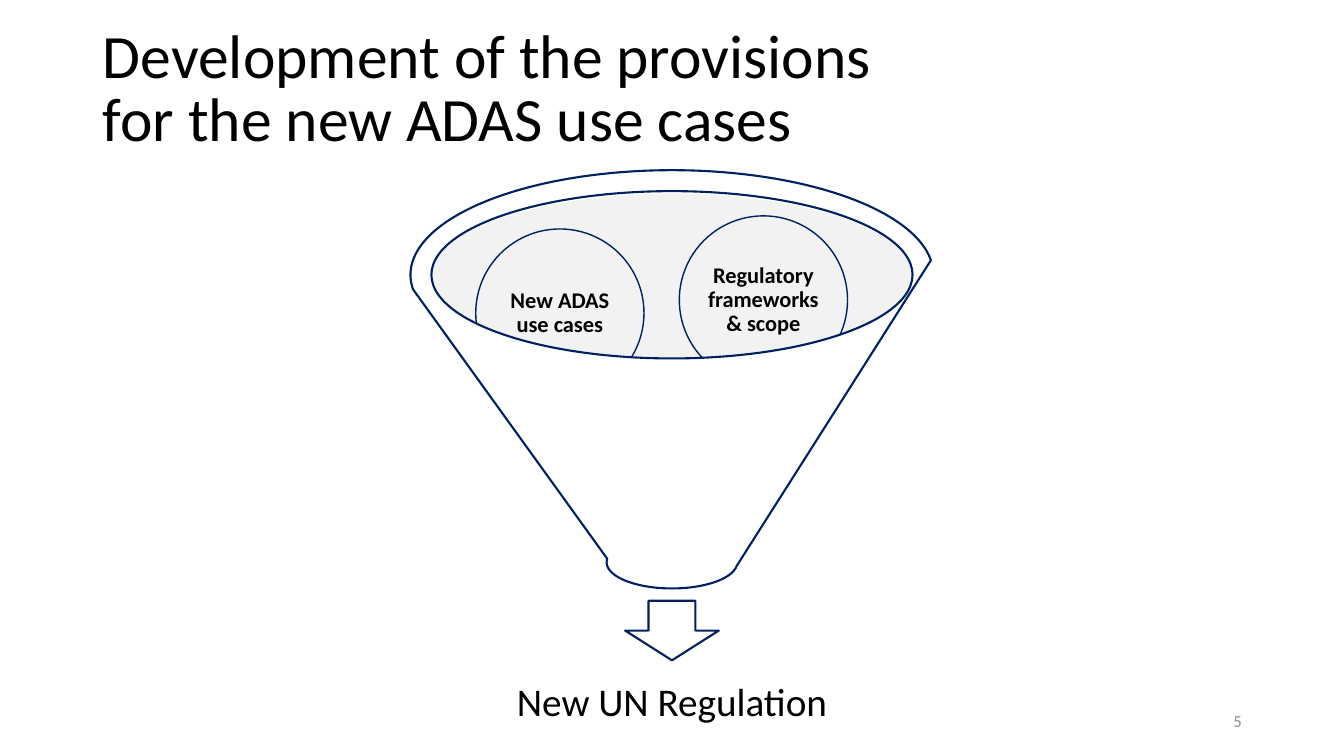
from pptx import Presentation
from pptx import util as u
from pptx.dml import color
from pptx.enum import shapes, text

TITLE = ["Development of the provisions", "for the new ADAS use cases"]
INPUTS = [("New ADAS use cases", 11.99, 5.77),
          ("Regulatory frameworks & scope", 17.12, 5.44)]
RESULT = "New UN Regulation"
NUMBER = "5"
WIDTH, HEIGHT = 33.87, 19.05
BALL = 4.24
THEME = {
    "font": "Calibri", "ink": "000000", "navy": "002060", "mouth": "F2F2F2",
    "paper": "FFFFFF", "grey": "8C8C8C",
    "title": 44, "result": 28, "ball": 16, "number": 12, "bold": 1.5, "thin": 1,
}
KIND = shapes.MSO_SHAPE
ALIGN = text.PP_ALIGN


def tint(name):
    return color.RGBColor.from_string(THEME[name])


def write(shape, lines, size, align, ink="ink", bold=False, space=0.9, pad=None):
    frame = shape.text_frame
    frame.word_wrap = True
    frame.auto_size = text.MSO_AUTO_SIZE.NONE
    frame.vertical_anchor = text.MSO_ANCHOR.MIDDLE
    if pad is not None:
        frame.margin_left = frame.margin_right = u.Cm(pad)
        frame.margin_top = frame.margin_bottom = u.Cm(pad)
    para = frame.paragraphs[0]
    para.alignment, para.line_spacing = align, space
    for i, line in enumerate(lines):
        if i:
            para.add_line_break()
        run = para.add_run()
        run.text = line
        font = run.font
        font.name, font.size, font.bold = THEME["font"], u.Pt(THEME[size]), bold
        font.color.rgb = tint(ink)


def draw(slide, kind, box, fill=None, line=None):
    shape = slide.shapes.add_shape(kind, *map(u.Cm, box))
    shape.shadow.inherit = False
    if fill:
        shape.fill.solid()
        shape.fill.fore_color.rgb = tint(fill)
    else:
        shape.fill.background()
    if line:
        shape.line.color.rgb = tint("navy")
        shape.line.width = u.Pt(THEME[line])
    else:
        shape.line.fill.background()
    return shape


def middle(top, width, height):
    return (WIDTH - width) / 2, top, width, height


def main():
    """Build the funnel slide and save it."""
    deck = Presentation()
    deck.slide_width, deck.slide_height = u.Cm(WIDTH), u.Cm(HEIGHT)
    slide = deck.slides.add_slide(deck.slide_layouts[5])

    title = slide.shapes.title
    title.left, title.top, title.width, title.height = map(
        u.Cm, (2.34, 0.46, 29.21, 3.68))
    write(title, TITLE, "title", ALIGN.LEFT, space=0.85)

    number = slide.shapes.add_textbox(*map(u.Cm, (23.93, 17.65, 7.62, 1.02)))
    write(number, [NUMBER], "number", ALIGN.RIGHT, "grey", space=1.0)

    draw(slide, KIND.OVAL, middle(4.88, 12.14, 4.22), "mouth")
    draw(slide, KIND.DOWN_ARROW, middle(15.14, 2.36, 1.5), line="bold")
    result = slide.shapes.add_textbox(*map(u.Cm, middle(16.43, 11.28, 2.62)))
    write(result, [RESULT], "result", ALIGN.CENTER, pad=0.56)

    for label, left, top in INPUTS:
        ball = draw(slide, KIND.OVAL, (left, top, BALL, BALL), line="thin")
        write(ball, [label], "ball", ALIGN.CENTER, bold=True, pad=0.05)

    draw(slide, KIND.FUNNEL, middle(4.29, 13.18, 10.54), "paper", "bold")
    deck.save("out.pptx")


if __name__ == "__main__":
    main()
